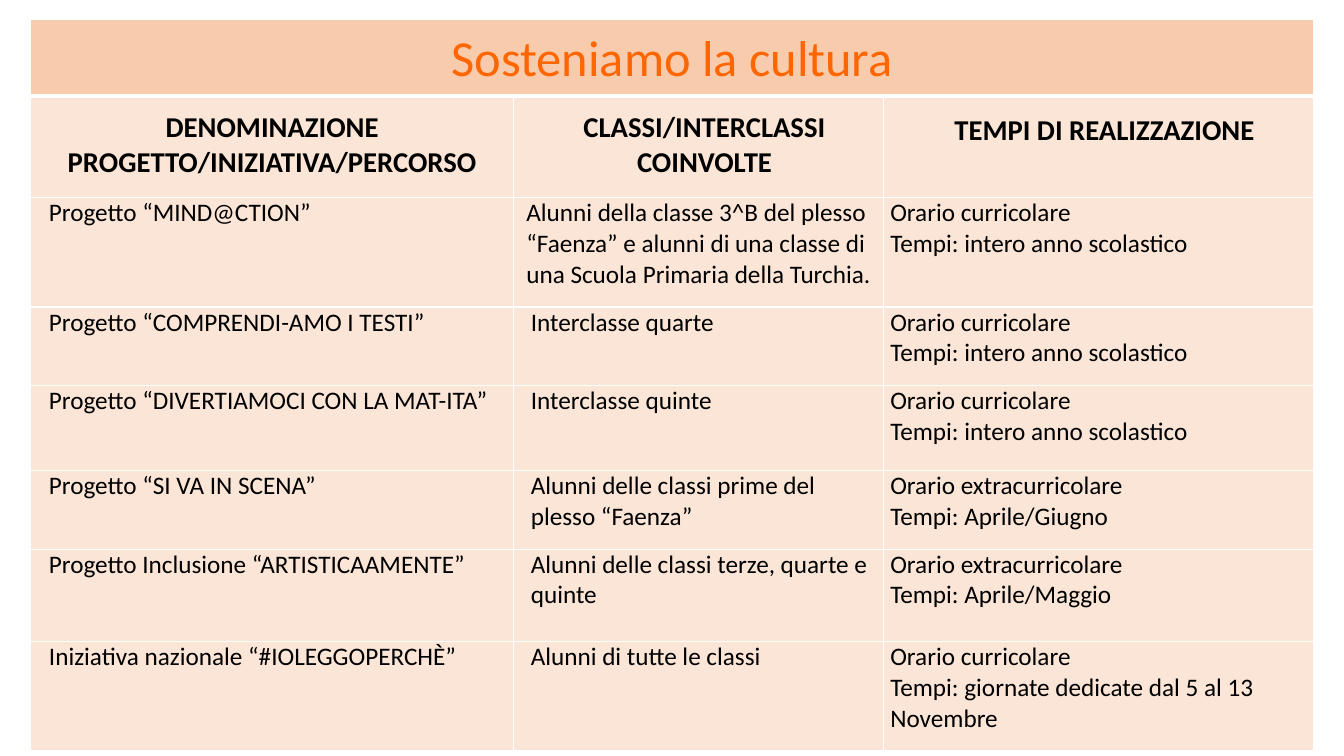
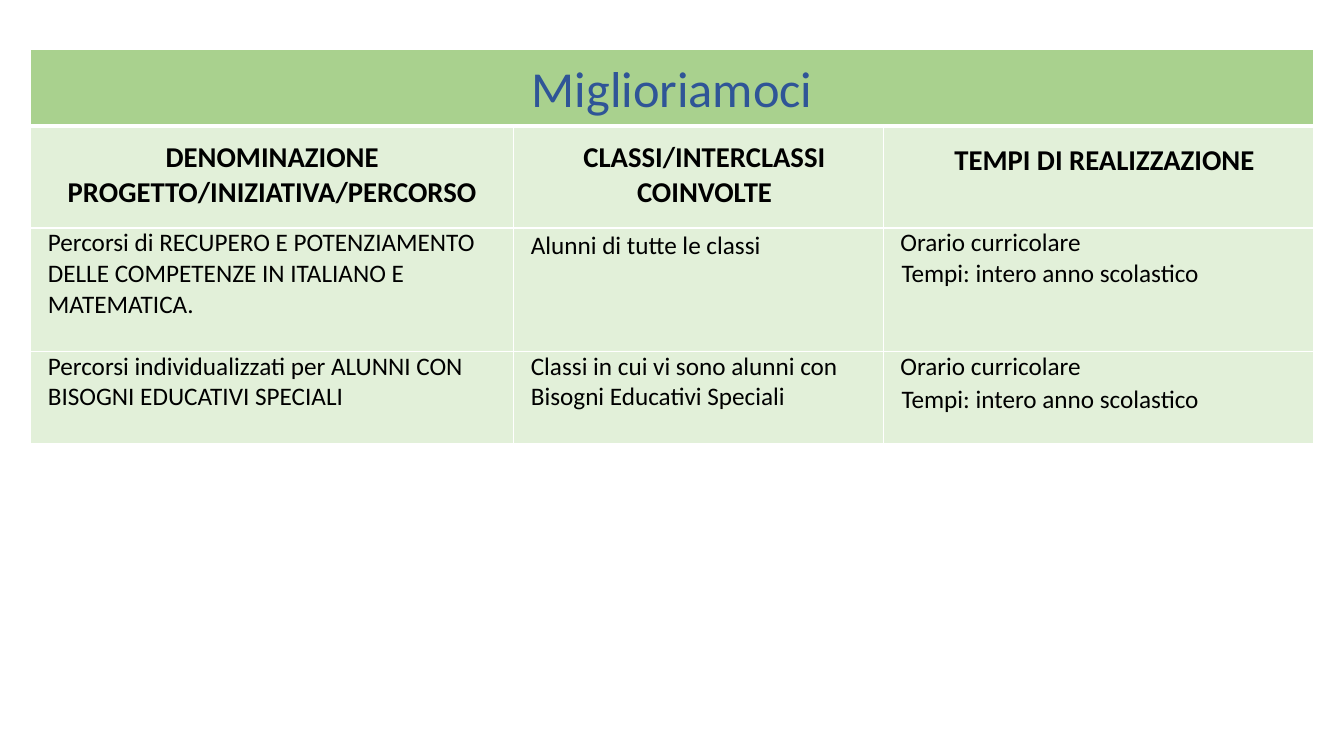
from typing import NamedTuple

from lxml.etree import SubElement
from pptx import Presentation
from pptx.dml.color import RGBColor as RGB
from pptx.enum.text import PP_ALIGN as AL
from pptx.oxml import parse_xml
from pptx.oxml.ns import nsdecls, qn
from pptx.util import Pt

BLACK = RGB(0x00, 0x00, 0x00)
WHITE = RGB(0xFF, 0xFF, 0xFF)
ORANGE = RGB(0xFF, 0x66, 0x00)
PEACH = RGB(0xF8, 0xCB, 0xAD)
PALE_PEACH = RGB(0xFB, 0xE5, 0xD6)
BLUE = RGB(0x2F, 0x55, 0x97)
GREEN = RGB(0xA9, 0xD1, 0x8E)
PALE_GREEN = RGB(0xE2, 0xF0, 0xD9)


class Theme(NamedTuple):
    title: RGB
    band: RGB
    body: RGB


class Para(NamedTuple):
    text: str
    indent: float = 0
    spacing: float = 1


CULTURE = Theme(ORANGE, PEACH, PALE_PEACH)
IMPROVE = Theme(BLUE, GREEN, PALE_GREEN)

HEADERS = [
    (10, [Para("DENOMINAZIONE"), Para("PROGETTO/INIZIATIVA/PERCORSO")]),
    (10, [Para("CLASSI/INTERCLASSI", 8.6), Para("COINVOLTE", 8.6)]),
    (10.4, [Para("TEMPI DI REALIZZAZIONE", 8.6, 1.07)]),
]


class Deck:
    FONT = "Calibri"
    TITLE_SIZE, HEADER_SIZE, BODY_SIZE = Pt(36), Pt(20.5), Pt(18)
    LEFT = 22
    COLUMNS = (345, 264, 307.5)
    TITLE_HEIGHT, HEADER_HEIGHT = 54, 73
    SIDE_MARGIN = Pt(5)
    THIN, THICK = 1, 3

    def __init__(self):
        self.prs = Presentation()
        self.prs.slide_width, self.prs.slide_height = Pt(960), Pt(540)
        self.s = None

    def add_slide(self):
        self.s = self.prs.slides.add_slide(self.prs.slide_layouts[6])

    def borders(self, cell, top=THIN, bottom=THIN):
        tcPr = cell._tc.get_or_add_tcPr()
        sides = (("L", self.THIN), ("R", self.THIN), ("T", top), ("B", bottom))
        for i, (side, width) in enumerate(sides):
            ln = parse_xml(f'<a:ln{side} {nsdecls("a")} w="{Pt(width)}"/>')
            fill = SubElement(ln, qn("a:solidFill"))
            SubElement(fill, qn("a:srgbClr")).set("val", str(WHITE))
            tcPr.insert(i, ln)

    def cell_text(self, cell, paras, size, color=BLACK, bold=False, align=AL.LEFT):
        tf = cell.text_frame
        for i, para in enumerate(paras):
            p = tf.add_paragraph() if i else tf.paragraphs[0]
            p.text = para.text
            p.alignment = align
            p.line_spacing = para.spacing
            p._p.get_or_add_pPr().set("marL", str(Pt(para.indent)))
            p.font.name, p.font.size = self.FONT, size
            p.font.bold, p.font.color.rgb = bold, color

    def paint(self, cell, color, top=THIN, bottom=THIN):
        cell.fill.solid()
        cell.fill.fore_color.rgb = color
        self.borders(cell, top, bottom)

    def body_cell(self, cell, theme, margin_top=0, top=THIN):
        self.paint(cell, theme.body, top)
        cell.margin_left = cell.margin_right = self.SIDE_MARGIN
        cell.margin_top, cell.margin_bottom = Pt(margin_top), 0

    def project_table(self, top, title, theme, rows):
        heights = [self.TITLE_HEIGHT, self.HEADER_HEIGHT] + [h for h, _ in rows]
        table = self.s.shapes.add_table(
            len(heights), len(self.COLUMNS), Pt(self.LEFT), Pt(top),
            Pt(sum(self.COLUMNS)), Pt(sum(heights))).table
        for column, width in zip(table.columns, self.COLUMNS):
            column.width = Pt(width)
        for row, height in zip(table.rows, heights):
            row.height = Pt(height)

        for cell in table.rows[0].cells:
            self.paint(cell, theme.band, bottom=self.THICK)
        table.cell(0, 0).merge(table.cell(0, 2))
        self.cell_text(table.cell(0, 0), [Para(title, 0, 1.07)], self.TITLE_SIZE,
                       theme.title, align=AL.CENTER)

        for c, (margin_top, paras) in enumerate(HEADERS):
            cell = table.cell(1, c)
            self.body_cell(cell, theme, margin_top, self.THICK)
            self.cell_text(cell, paras, self.HEADER_SIZE, bold=True, align=AL.CENTER)

        for r, (_, cells) in enumerate(rows, 2):
            for c, paras in enumerate(cells):
                cell = table.cell(r, c)
                self.body_cell(cell, theme)
                self.cell_text(cell, paras, self.BODY_SIZE)


def lines(*texts, indent=7.2):
    return [Para(text, indent) for text in texts]


def project(height, name, classes, times):
    return height, (lines(name, indent=8), classes, lines(*times, indent=0))


def main():
    deck = Deck()
    in_school, after_school = "Orario curricolare", "Orario extracurricolare"
    all_year = "Tempi: intero anno scolastico"
    everyone = "Alunni di tutte le classi"

    deck.add_slide()
    deck.project_table(14, "Sosteniamo la cultura", CULTURE, [
        project(78, "Progetto “MIND@CTION”",
                lines("Alunni della classe 3^B del plesso",
                      "“Faenza” e alunni di una classe di",
                      "una Scuola Primaria della Turchia.", indent=4),
                (in_school, all_year)),
        project(56, "Progetto “COMPRENDI-AMO I TESTI”",
                lines("Interclasse quarte"), (in_school, all_year)),
        project(61, "Progetto “DIVERTIAMOCI CON LA MAT-ITA”",
                lines("Interclasse quinte"), (in_school, all_year)),
        project(56, "Progetto “SI VA IN SCENA”",
                lines("Alunni delle classi prime del plesso “Faenza”"),
                (after_school, "Tempi: Aprile/Giugno")),
        project(66, "Progetto Inclusione “ARTISTICAAMENTE”",
                lines("Alunni delle classi terze, quarte e quinte"),
                (after_school, "Tempi: Aprile/Maggio")),
        project(78, "Iniziativa nazionale “#IOLEGGOPERCHÈ”",
                lines(everyone),
                (in_school, "Tempi: giornate dedicate dal 5 al 13 Novembre")),
    ])

    deck.add_slide()
    deck.project_table(35.5, "Miglioriamoci", IMPROVE, [
        (88, (lines("Percorsi di RECUPERO E POTENZIAMENTO DELLE COMPETENZE "
                    "IN ITALIANO E MATEMATICA."),
              [Para(everyone, 7.2, 1.07)],
              [Para(in_school, 7.2), Para(all_year, 8)])),
        (66, (lines("Percorsi individualizzati per ALUNNI CON BISOGNI "
                    "EDUCATIVI SPECIALI"),
              lines("Classi in cui vi sono alunni con Bisogni Educativi Speciali"),
              [Para(in_school, 7.2), Para(all_year, 8, 1.07)])),
    ])

    deck.prs.save("out.pptx")


if __name__ == "__main__":
    main()
